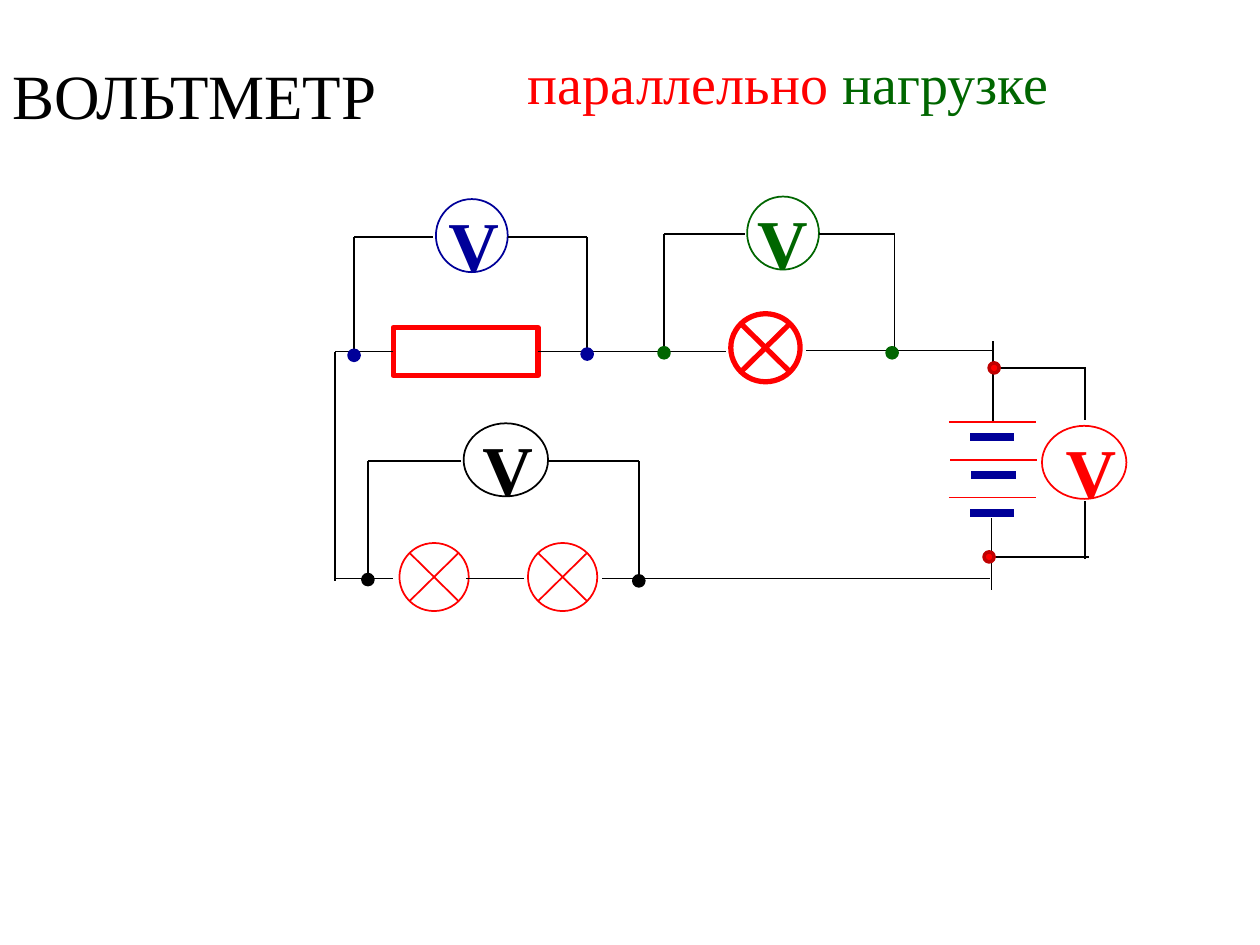
from lxml import etree
from pptx import Presentation
from pptx.dml.color import RGBColor
from pptx.enum.shapes import MSO_CONNECTOR, MSO_SHAPE
from pptx.enum.text import MSO_ANCHOR
from pptx.oxml.ns import qn
from pptx.util import Inches, Pt

BLACK = RGBColor(0, 0, 0)
RED = RGBColor(0xFF, 0, 0)
DARK_RED = RGBColor(0xC0, 0, 0)
GREEN = RGBColor(0, 0x66, 0)
BLUE = RGBColor(0, 0, 0x99)

STRAIGHT = MSO_CONNECTOR.STRAIGHT
OVAL = MSO_SHAPE.OVAL
RECTANGLE = MSO_SHAPE.RECTANGLE
LAMP = MSO_SHAPE.FLOWCHART_SUMMING_JUNCTION
TOP = MSO_ANCHOR.TOP
MIDDLE = MSO_ANCHOR.MIDDLE
LEFT_SIDE, RIGHT_SIDE = 1, 3

FONT = "Times New Roman"
SLIDE_WIDTH, SLIDE_HEIGHT = Inches(10), Inches(7.5)
COLUMNS, ROWS = 100, 75
METER_HEIGHT = 5.8
CELL_PITCH = 3


def column(number):
    """Return the horizontal length of a number of grid columns."""
    return round(SLIDE_WIDTH * number / COLUMNS)


def row(number):
    """Return the vertical length of a number of grid rows."""
    return round(SLIDE_HEIGHT * number / ROWS)


def add_wire(shapes, start, end, width=1, color=BLACK):
    """Draw a straight line between two grid points."""
    wire = shapes.add_connector(
        STRAIGHT, column(start[0]), row(start[1]), column(end[0]), row(end[1])
    )
    wire.line.color.rgb = color
    wire.line.width = Pt(width)
    etree.SubElement(wire._element.spPr, qn("a:effectLst"))
    return wire


def add_symbol(shapes, kind, left, top, width, height, color, line_width, fill=None):
    """Draw an outlined preset shape, filled only when a fill is given."""
    shape = shapes.add_shape(kind, column(left), row(top), column(width), row(height))
    shape.shadow.inherit = False
    if fill is None:
        shape.fill.background()
    else:
        shape.fill.solid()
        shape.fill.fore_color.rgb = fill
    shape.line.color.rgb = color
    shape.line.width = Pt(line_width)
    return shape


def add_text(shapes, left, top, width, height, runs, size, anchor=MIDDLE, bold=False):
    """Add one line of text made of (text, colour) runs."""
    box = shapes.add_textbox(column(left), row(top), column(width), row(height))
    frame = box.text_frame
    frame.word_wrap = False
    frame.vertical_anchor = anchor
    paragraph = frame.paragraphs[0]
    for text, color in runs:
        run = paragraph.add_run()
        run.text = text
        run.font.name = FONT
        run.font.size = Pt(size)
        run.font.bold = bold
        run.font.color.rgb = color
    return box


def add_meter(shapes, left, top, width, letter_shift, color):
    """Draw a voltmeter circle with its letter."""
    letter = add_text(
        shapes, left + letter_shift, top - 0.8, width + 4.5, 9.2,
        [("V", color)], 40, TOP, True,
    )
    letter.text_frame.margin_top = row(1)
    add_symbol(shapes, OVAL, left, top, width, METER_HEIGHT, color, 1)


def add_bridge(slide, left, right, level, meter_left, meter_width, letter_shift, color):
    """Draw a voltmeter with the leads that bridge a load below it."""
    shapes = slide.shapes.add_group_shape().shapes
    add_meter(shapes, meter_left, level - 3, meter_width, letter_shift, color)
    add_wire(shapes, (meter_left + meter_width, level), (right, level))
    add_wire(shapes, (left, level), (meter_left - 0.2, level))
    for side in (left, right):
        add_wire(shapes, (side, level), (side, level + 9.4))


def add_source_meter(slide):
    """Draw the voltmeter that bridges the battery."""
    shapes = slide.shapes.add_group_shape().shapes
    add_meter(shapes, 82.7, 33.8, 6.7, 0.9, RED)
    for start, end in (
        ((78.8, 29.2), (86.2, 29.2)),
        ((78.5, 44.2), (86.4, 44.2)),
        ((86.1, 29.2), (86.1, 33.3)),
        ((86.1, 39.8), (86.1, 44.4)),
    ):
        add_wire(shapes, start, end)


def add_battery(shapes):
    """Draw three cells, each a long thin plate over a short thick one."""
    for index, left in enumerate((75.3, 75.4, 75.3)):
        level = 33.5 + index * CELL_PITCH
        add_wire(shapes, (left, level), (left + 6.9, level), 0.75, RED)
        add_wire(shapes, (left + 1.7, level + 1.2), (left + 5.2, level + 1.2), 4.5, BLUE)


def add_circuit(slide):
    """Draw the main loop: resistor, lamps, battery and wires."""
    shapes = slide.shapes.add_group_shape().shapes
    resistor = add_symbol(shapes, RECTANGLE, 31.2, 26, 11.5, 3.8, RED, 3)
    for left, top, line_width in ((58, 24.9, 3), (31.7, 43.1, 1), (41.9, 43.1, 1)):
        add_symbol(shapes, LAMP, left, top, 5.5, 5.4, RED, line_width)
    add_battery(shapes)
    for start, end in (
        ((26.6, 27.9), (26.6, 46.1)),
        ((64, 27.8), (78.8, 27.8)),
        ((78.8, 27.1), (78.8, 33.4)),
        ((78.7, 41.1), (78.7, 46.8)),
        ((47.8, 45.9), (78.6, 45.9)),
        ((37, 45.9), (41.6, 45.9)),
        ((26.6, 45.9), (31.2, 45.9)),
    ):
        add_wire(shapes, start, end, 0.75)
    inlet = add_wire(shapes, (26.6, 27.9), (31.2, 27.9), 0.75)
    inlet.end_connect(resistor, LEFT_SIDE)
    outlet = add_wire(shapes, (42.7, 27.9), (57.6, 27.9), 0.75)
    outlet.begin_connect(resistor, RIGHT_SIDE)


def add_nodes(slide):
    """Mark the points where voltmeter leads meet the circuit."""
    for left, top, fill, line in (
        (27.7, 27.8, BLUE, BLUE),
        (46.2, 27.7, BLUE, BLUE),
        (52.3, 27.6, GREEN, GREEN),
        (70.4, 27.6, GREEN, GREEN),
        (28.8, 45.6, BLACK, BLACK),
        (50.3, 45.7, BLACK, BLACK),
        (78.1, 43.8, RED, DARK_RED),
        (78.5, 28.8, RED, DARK_RED),
    ):
        add_symbol(slide.shapes, OVAL, left, top, 0.8, 0.8, line, 2, fill)


def main():
    """Build the slide and save it."""
    presentation = Presentation()
    presentation.slide_width = SLIDE_WIDTH
    presentation.slide_height = SLIDE_HEIGHT
    slide = presentation.slides.add_slide(presentation.slide_layouts[6])
    add_bridge(slide, 52.7, 71, 18.6, 59.3, 5.7, -0.2, GREEN)
    add_circuit(slide)
    add_bridge(slide, 28.1, 46.6, 18.8, 34.6, 5.7, 0, BLUE)
    add_bridge(slide, 29.2, 50.7, 36.6, 36.8, 6.7, 0.5, BLACK)
    add_source_meter(slide)
    add_text(slide.shapes, 0, 3.9, 31.2, 7.1, [("ВОЛЬТМЕТР", BLACK)], 36)
    add_text(
        slide.shapes, 39.8, 2.3, 45.5, 8.4,
        [(" параллельно ", RED), ("нагрузке", GREEN)], 32,
    )
    add_nodes(slide)
    presentation.save("out.pptx")


if __name__ == "__main__":
    main()
